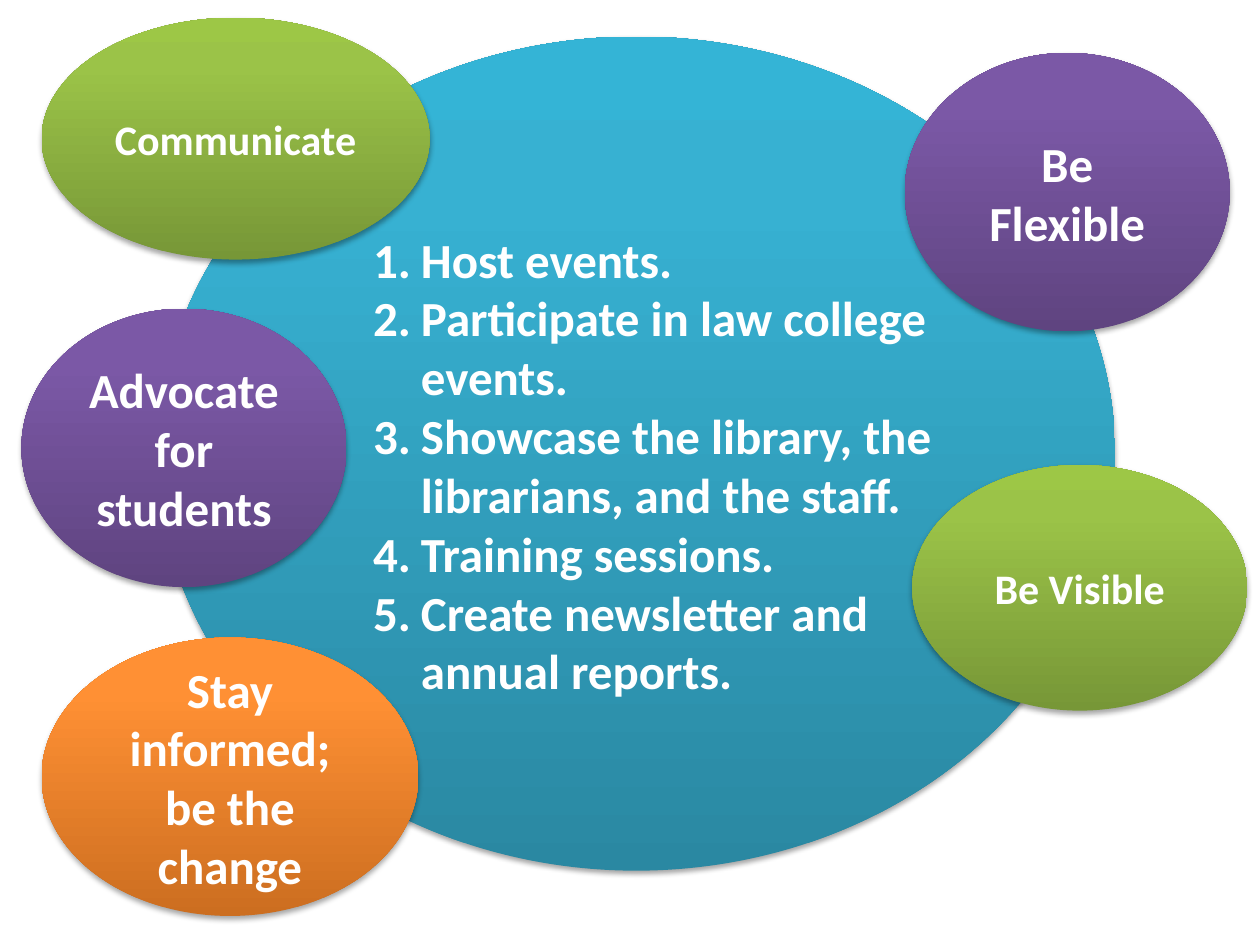
from dataclasses import dataclass

from lxml import etree
from pptx import Presentation
from pptx import util as u
from pptx.dml.color import RGBColor
from pptx.enum import shapes, text
from pptx.oxml import parse_xml
from pptx.oxml.ns import nsdecls, qn

WHITE = RGBColor(0xFF, 0xFF, 0xFF)
BLUE = (RGBColor(0x2A, 0x88, 0xA2), RGBColor(0x37, 0xB1, 0xD2), RGBColor(0x34, 0xB4, 0xD6))
GREEN = (RGBColor(0x77, 0x97, 0x37), RGBColor(0x9B, 0xC3, 0x48), RGBColor(0x9D, 0xC7, 0x46))
PURPLE = (RGBColor(0x5F, 0x44, 0x80), RGBColor(0x7B, 0x58, 0xA6), RGBColor(0x7C, 0x57, 0xA8))
ORANGE = (RGBColor(0xCC, 0x6E, 0x20), RGBColor(0xFF, 0x90, 0x34), RGBColor(0xFF, 0x91, 0x36))
STOPS = (0, 80, 100)


@dataclass
class Bubble:
    left: float
    top: float
    width: float
    height: float
    colors: tuple
    lines: tuple
    size: int = 28
    numbered: bool = False


BUBBLES = [
    Bubble(1.25, 0.29, 7.6, 6.62, BLUE, (
        "Host events.",
        "Participate in law college events.",
        "Showcase the library, the librarians, and the staff.",
        "Training sessions.",
        "Create newsletter and annual reports.",
    ), numbered=True),
    Bubble(0.33, 0.14, 3.08, 1.92, GREEN, ("Communicate",), 24),
    Bubble(0.17, 2.45, 2.58, 2.21, PURPLE, ("Advocate for students",)),
    Bubble(0.33, 5.06, 2.99, 2.21, ORANGE, ("Stay informed; be the change",)),
    Bubble(7.18, 0.42, 2.58, 2.21, PURPLE, ("Be Flexible",)),
    Bubble(7.24, 3.69, 2.66, 1.95, GREEN, ("Be Visible",), 24),
]


def style_shape(s, colors: tuple) -> None:
    stops = "".join(
        f'<a:gs pos="{pos * 1000}"><a:srgbClr val="{color}"/></a:gs>'
        for pos, color in zip(STOPS, colors)
    )
    sp_pr = s._element.spPr
    sp_pr.append(parse_xml(
        f'<a:gradFill {nsdecls("a")} rotWithShape="1"><a:gsLst>{stops}</a:gsLst>'
        '<a:lin ang="16200000" scaled="0"/></a:gradFill>'
    ))
    s.line.fill.background()
    sp_pr.append(parse_xml(
        f'<a:effectLst {nsdecls("a")}><a:outerShdw blurRad="{u.Pt(3.1)}" '
        f'dist="{u.Pt(1.8)}" dir="5400000" rotWithShape="0">'
        '<a:srgbClr val="000000"><a:alpha val="35000"/></a:srgbClr>'
        '</a:outerShdw></a:effectLst>'
    ))


def number_paragraph(p) -> None:
    p.level = 1
    p_pr = p._p.get_or_add_pPr()
    p_pr.set("marL", str(u.Inches(0.88)))
    p_pr.set("indent", str(u.Inches(-0.38)))
    etree.SubElement(p_pr, qn("a:buFont"), typeface="+mj-lt")
    etree.SubElement(p_pr, qn("a:buAutoNum"), type="arabicPeriod")


def add_bubble(slide, bubble: Bubble) -> None:
    box = map(u.Inches, (bubble.left, bubble.top, bubble.width, bubble.height))
    s = slide.shapes.add_shape(shapes.MSO_SHAPE.OVAL, *box)
    style_shape(s, bubble.colors)
    tf = s.text_frame
    tf.word_wrap = True
    tf.vertical_anchor = text.MSO_ANCHOR.MIDDLE
    if bubble.numbered:
        tf.margin_top = u.Inches(0.22)
    tf.text = "\n".join(bubble.lines)
    font_format = {"name": "Calibri", "size": u.Pt(bubble.size), "bold": True}
    for p in tf.paragraphs:
        if bubble.numbered:
            p.alignment = text.PP_ALIGN.LEFT
            number_paragraph(p)
        else:
            p.alignment = text.PP_ALIGN.CENTER
        r = p.runs[0]
        for key, value in font_format.items():
            setattr(r.font, key, value)
        r.font.color.rgb = WHITE


def main() -> None:
    prs = Presentation()
    prs.slide_width, prs.slide_height = u.Inches(10), u.Inches(7.5)
    slide = prs.slides.add_slide(prs.slide_layouts[6])
    for bubble in BUBBLES:
        add_bubble(slide, bubble)
    prs.save("out.pptx")


if __name__ == "__main__":
    main()
